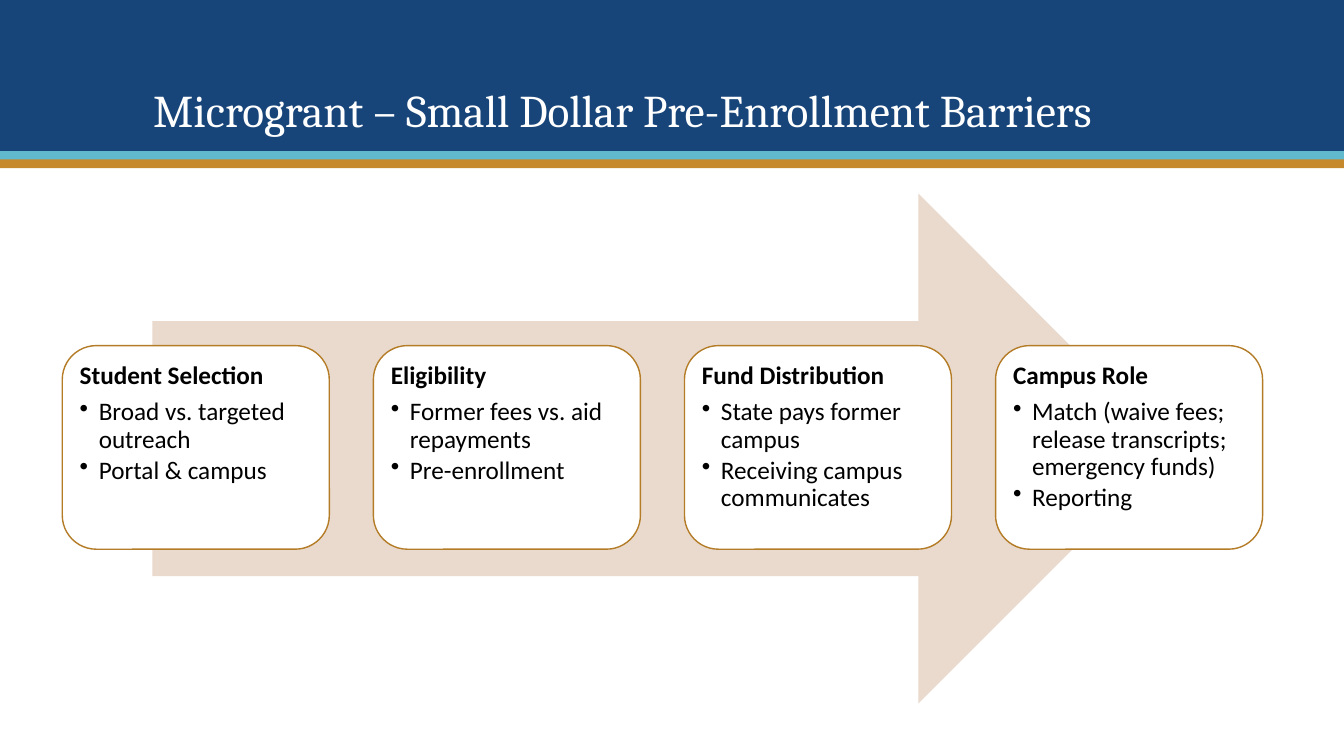
import dataclasses

import pptx
import pptx.dml.color
import pptx.enum.shapes
import pptx.enum.text
import pptx.oxml
import pptx.oxml.ns
import pptx.util

Cm = pptx.util.Cm
Pt = pptx.util.Pt
Shape = pptx.enum.shapes.MSO_SHAPE
Anchor = pptx.enum.text.MSO_ANCHOR
Align = pptx.enum.text.PP_ALIGN


@dataclasses.dataclass(frozen=True)
class Theme:
    navy: str = "174479"
    aqua: str = "60B9CD"
    gold: str = "C6892B"
    outline: str = "B47C27"
    sand: str = "EADACD"
    white: str = "FFFFFF"
    black: str = "000000"
    title_font: str = "Cambria"
    body_font: str = "Calibri"
    title_size: float = 32.4
    body_size: float = 18


THEME = Theme()

PAGE_WIDTH, PAGE_HEIGHT = 33.87, 19.05

BANDS = [
    (0, 3.81, THEME.navy),
    (3.81, 0.22, THEME.aqua),
    (4.02, 0.22, THEME.gold),
]

STEPS = [
    ("Student Selection", ["Broad vs. targeted outreach", "Portal & campus"]),
    ("Eligibility", ["Former fees vs. aid repayments", "Pre-enrollment"]),
    ("Fund Distribution", ["State pays former campus", "Receiving campus communicates"]),
    ("Campus Role", [
        "Match (waive fees; release transcripts; emergency funds)",
        "Reporting",
    ]),
]

CARD_LEFT, CARD_TOP, CARD_WIDTH, CARD_HEIGHT = 1.57, 8.71, 6.73, 5.13
CARD_PITCH = 7.84


def apply_format(target, values):
    for name, value in values.items():
        setattr(target, name, value)


def rgb(code):
    return pptx.dml.color.RGBColor.from_string(code)


def add_block(page, kind, left, top, width, height, fill, outline=None):
    block = page.shapes.add_shape(kind, Cm(left), Cm(top), Cm(width), Cm(height))
    block.shadow.inherit = False
    block.fill.solid()
    block.fill.fore_color.rgb = rgb(fill)
    if outline:
        block.line.color.rgb = rgb(outline)
        block.line.width = Pt(1)
    else:
        block.line.fill.background()
    return block


def write_para(para, text, font, size, color, bold=False, space_after=0):
    apply_format(para, {
        "alignment": Align.LEFT,
        "line_spacing": 0.9,
        "space_after": Pt(space_after),
    })
    span = para.add_run()
    span.text = text
    apply_format(span.font, {"name": font, "size": Pt(size), "bold": bold})
    span.font.color.rgb = rgb(color)


def add_bullet(para):
    properties = para._p.get_or_add_pPr()
    indent = Cm(0.48)
    properties.set("marL", str(indent))
    properties.set("indent", str(-indent))
    namespace = pptx.oxml.ns.nsdecls("a")
    properties.append(pptx.oxml.parse_xml(f'<a:buChar {namespace} char="•"/>'))


def add_title(page, text):
    box = page.shapes.add_textbox(Cm(3.61), Cm(0.71), Cm(26.67), Cm(2.87))
    frame = box.text_frame
    apply_format(frame, {"word_wrap": True, "vertical_anchor": Anchor.BOTTOM})
    write_para(frame.paragraphs[0], text, THEME.title_font, THEME.title_size, THEME.white)


def add_card(page, left, heading, points):
    card = add_block(page, Shape.ROUNDED_RECTANGLE, left, CARD_TOP, CARD_WIDTH,
                     CARD_HEIGHT, THEME.white, THEME.outline)
    frame = card.text_frame
    inset = Cm(0.19)
    apply_format(frame, {
        "word_wrap": True,
        "vertical_anchor": Anchor.TOP,
        "margin_left": inset,
        "margin_top": inset,
        "margin_right": inset,
        "margin_bottom": inset,
    })
    style = (THEME.body_font, THEME.body_size, THEME.black)
    write_para(frame.paragraphs[0], heading, *style, bold=True,
               space_after=0.35 * THEME.body_size)
    for point in points:
        para = frame.add_paragraph()
        write_para(para, point, *style, space_after=0.15 * THEME.body_size)
        add_bullet(para)


def main():
    deck = pptx.Presentation()
    apply_format(deck, {"slide_width": Cm(PAGE_WIDTH), "slide_height": Cm(PAGE_HEIGHT)})
    page = deck.slides.add_slide(deck.slide_layouts[6])
    for top, height, color in BANDS:
        add_block(page, Shape.RECTANGLE, 0, top, PAGE_WIDTH, height, color)
    add_title(page, "Microgrant – Small Dollar Pre-Enrollment Barriers")
    add_block(page, Shape.RIGHT_ARROW, 3.84, 4.88, 25.73, 12.85, THEME.sand)
    for index, (heading, points) in enumerate(STEPS):
        add_card(page, CARD_LEFT + index * CARD_PITCH, heading, points)
    deck.save("out.pptx")


if __name__ == "__main__":
    main()
